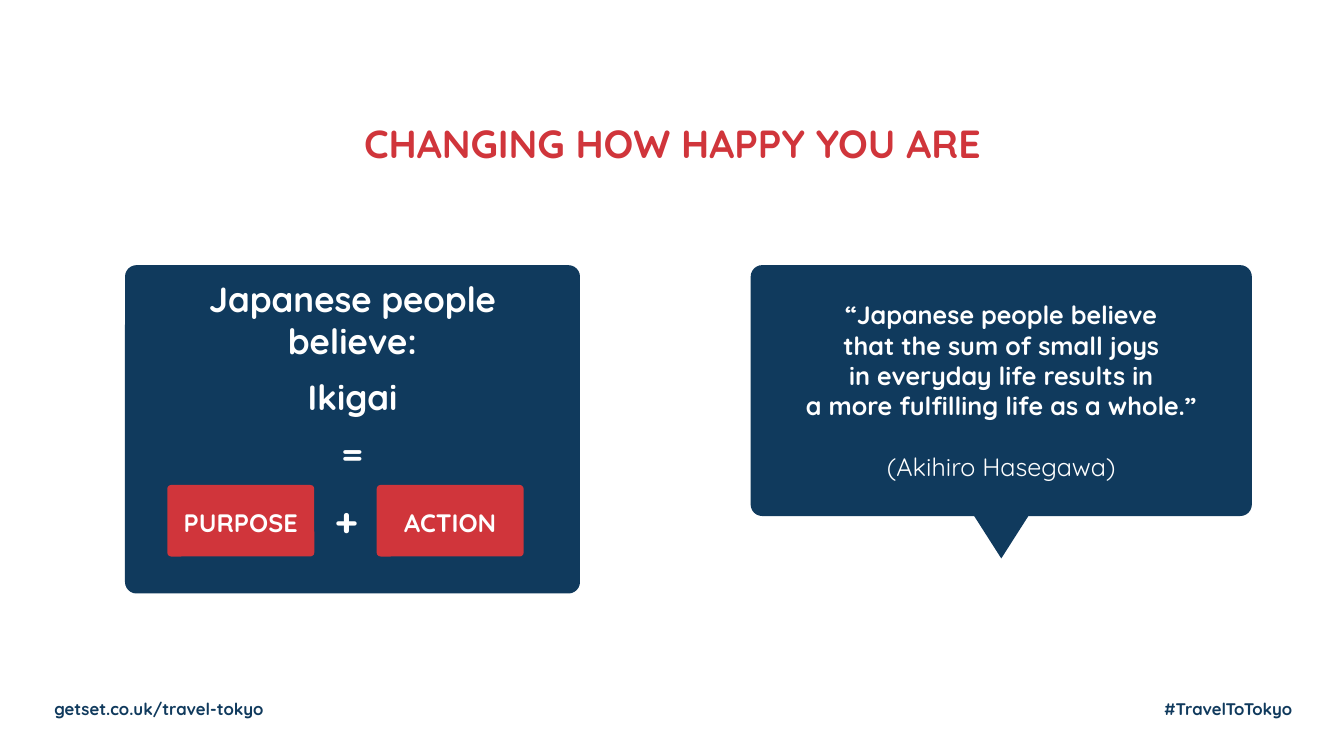
from pptx import Presentation
from pptx.dml.color import RGBColor
from pptx.enum.shapes import MSO_SHAPE
from pptx.enum.text import MSO_ANCHOR, PP_ALIGN
from pptx.util import Pt

NAVY, RED, WHITE = "103A5D", "D0353B", "FFFFFF"
FONT = "Quicksand"


def color(hex_string):
    return RGBColor.from_string(hex_string)


def write(shape, texts, size, hex_string, align=PP_ALIGN.CENTER,
          anchor=MSO_ANCHOR.TOP, gap=0):
    text_frame = shape.text_frame
    text_frame.word_wrap = True
    text_frame.vertical_anchor = anchor
    for index, text in enumerate(texts):
        paragraph = text_frame.add_paragraph() if index else text_frame.paragraphs[0]
        paragraph.text = text
        paragraph.alignment = align
        paragraph.space_before = Pt(gap if index else 0)
        for run in paragraph.runs:
            run.font.name = FONT
            run.font.size = Pt(size)
            run.font.bold = True
            run.font.color.rgb = color(hex_string)
    return text_frame.paragraphs


def add_text(slide, box, texts, size, hex_string, **layout):
    shape = slide.shapes.add_textbox(*map(Pt, box))
    write(shape, texts, size, hex_string, **layout)


def add_block(slide, kind, box, hex_string, adjustment):
    shape = slide.shapes.add_shape(kind, *map(Pt, box))
    shape.shadow.inherit = False
    shape.fill.solid()
    shape.fill.fore_color.rgb = color(hex_string)
    shape.line.fill.background()
    shape.adjustments[0] = adjustment
    return shape


def add_title(slide, box):
    add_text(slide, box, ["CHANGING HOW HAPPY YOU ARE"], 28, RED)


def add_footer(slide, left, top):
    for offset, width, text in [(0, 256, "getset.co.uk/travel-tokyo"),
                                (792.7, 145, "#TravelToTokyo")]:
        add_text(slide, (left + offset, top, width, 21.6), [text], 12, NAVY,
                 align=PP_ALIGN.LEFT)


def add_belief_card(slide, left, top, width, height):
    add_block(slide, MSO_SHAPE.ROUNDED_RECTANGLE, (left, top, width, height), NAVY, 0.035)
    add_text(slide, (left + 22.3, top + 7.2, width - 44.6, 142.6),
             ["Japanese people believe:", "Ikigai", "="], 25, WHITE,
             anchor=MSO_ANCHOR.MIDDLE, gap=10)

    # Two ingredients with a plus sign between them
    label_top = top + 157
    for index, word in enumerate(["PURPOSE", "ACTION"]):
        label_left = left + 30.2 + index * 149.6
        add_block(slide, MSO_SHAPE.ROUNDED_RECTANGLE,
                  (label_left, label_top, 105, 51.1), RED, 0.055)
        add_text(slide, (label_left, label_top + 12.4, 105, 28.8), [word], 18, WHITE)
    add_text(slide, (left + 127.4, label_top + 4.3, 61.2, 41), ["+"], 28, WHITE)


def add_quote_bubble(slide, left, top, width, height):
    bubble = add_block(slide, MSO_SHAPE.ROUNDED_RECTANGLE,
                       (left, top, width, height), NAVY, 0.046)
    paragraphs = write(bubble, [
        "“Japanese people believe\nthat the sum of small joys",
        "in everyday life results in\na more fulfilling life as a whole.”",
        "(Akihiro Hasegawa)",
    ], 18, WHITE, anchor=MSO_ANCHOR.MIDDLE)

    # Lighter attribution, one line below the quote
    paragraphs[-1].space_before = Pt(22)
    paragraphs[-1].runs[0].font.bold = False

    # Tail pointing down
    tail = add_block(slide, MSO_SHAPE.ISOSCELES_TRIANGLE,
                     (left + width / 2 - 23, top + height - 5.7, 46, 36), NAVY, 0.5)
    tail.rotation = 180


def main():
    presentation = Presentation()
    presentation.slide_width = Pt(960)
    presentation.slide_height = Pt(540)
    slide = presentation.slides.add_slide(presentation.slide_layouts[6])
    add_footer(slide, 31.7, 495.4)
    add_title(slide, (186.5, 81.4, 587.5, 41))
    add_belief_card(slide, 89.3, 189.4, 325, 234.5)
    add_quote_bubble(slide, 536.2, 189.4, 358, 179.2)
    presentation.save("out.pptx")


if __name__ == "__main__":
    main()
